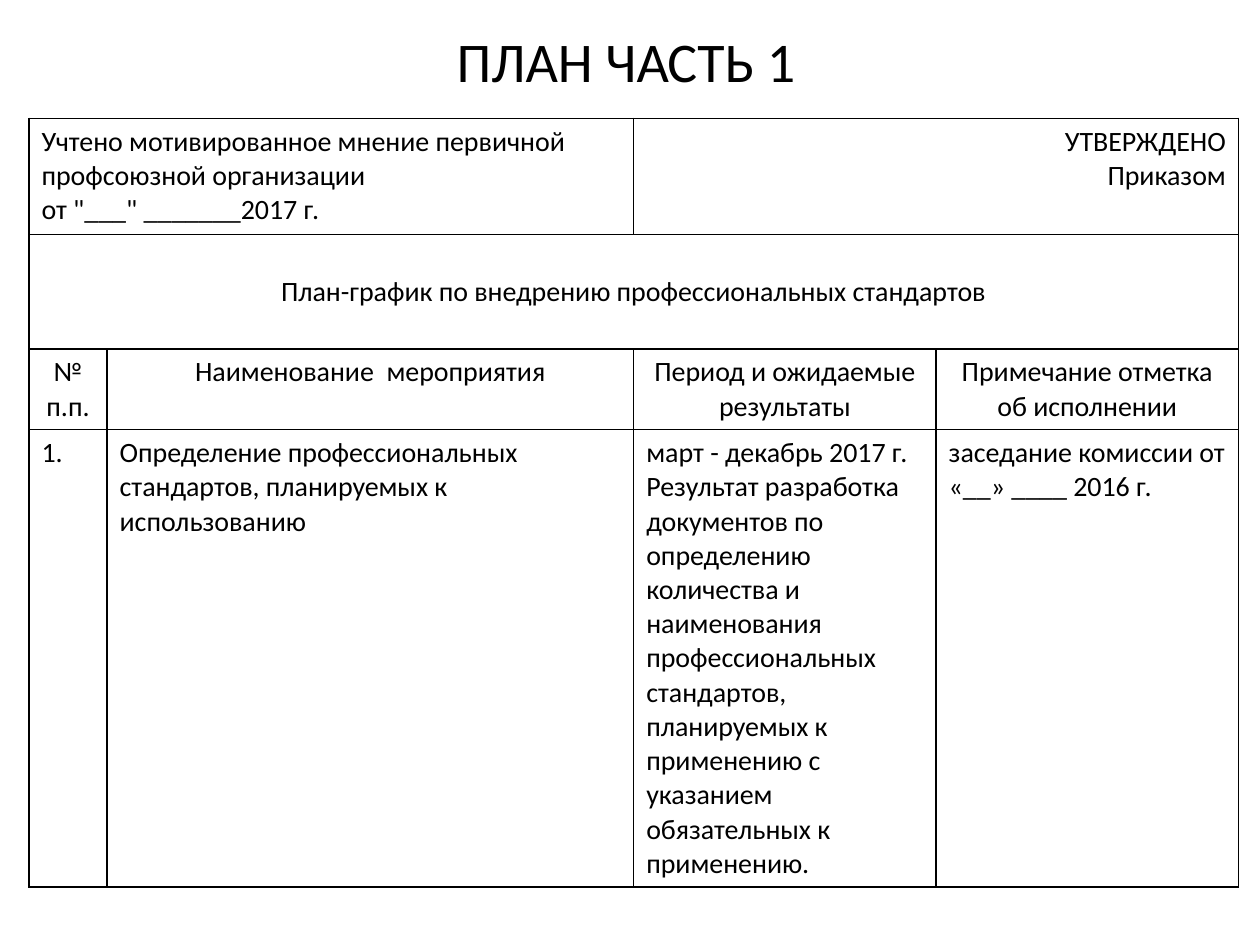
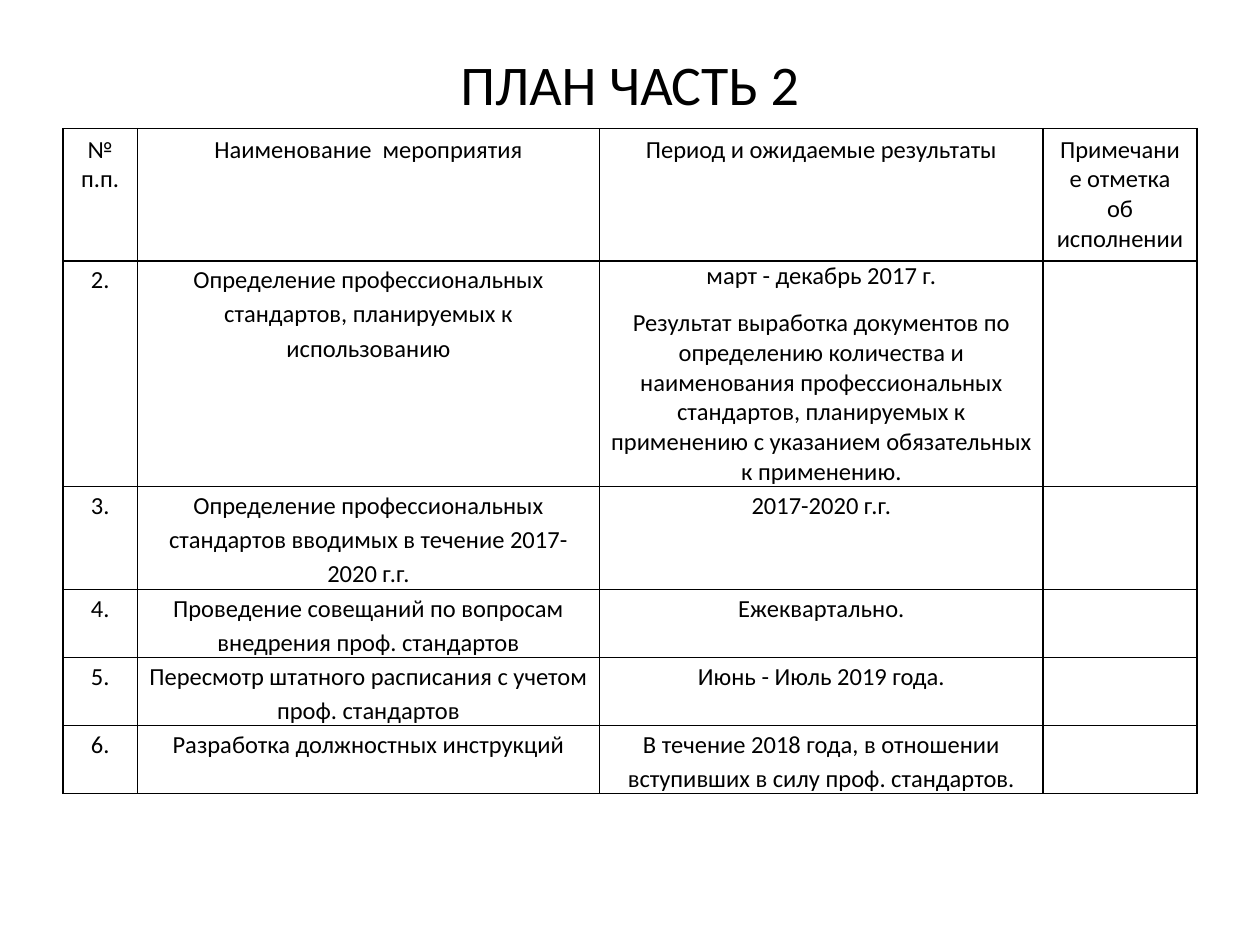
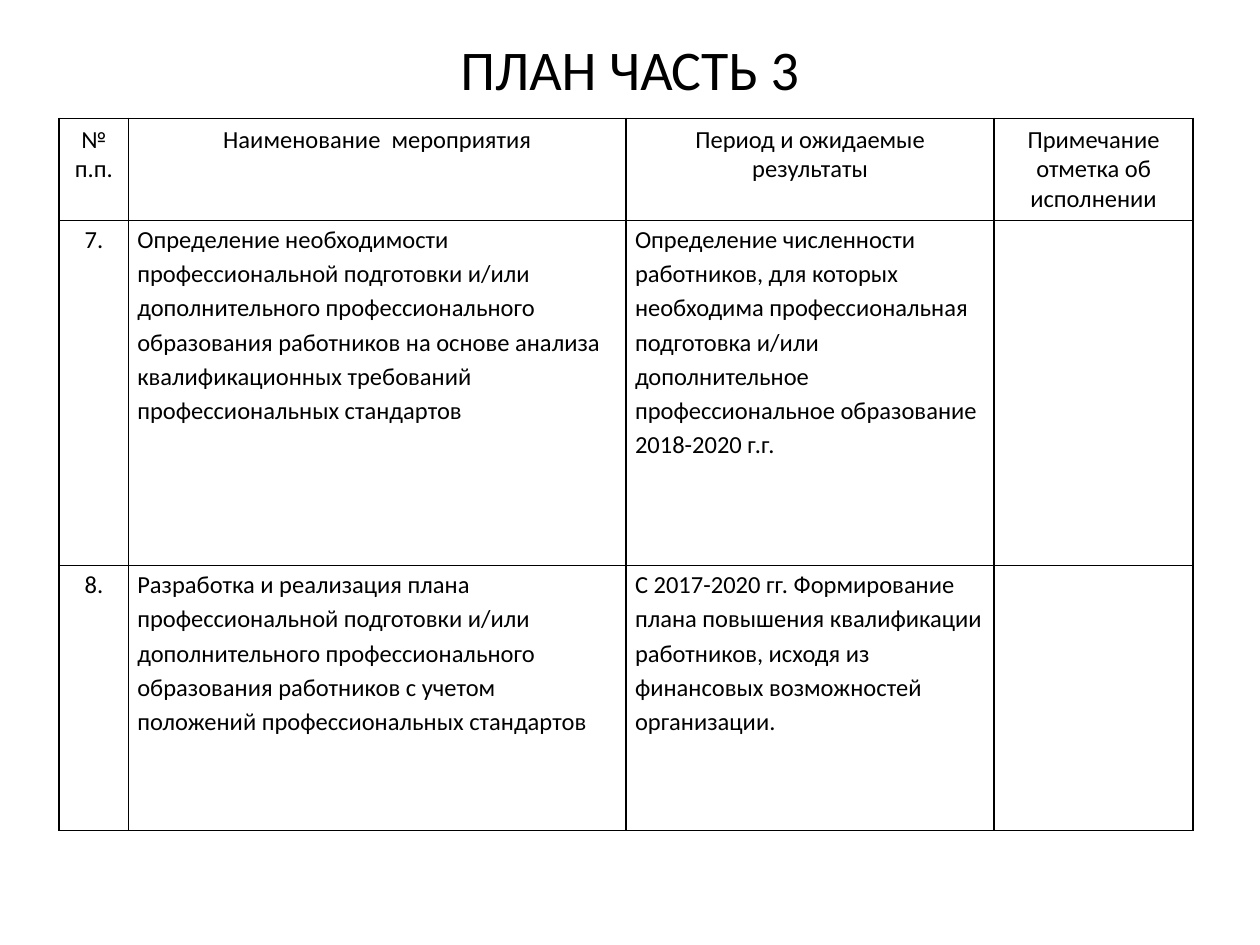
from lxml import etree
from pptx import Presentation
from pptx.dml.color import RGBColor
from pptx.enum.text import MSO_ANCHOR, PP_ALIGN
from pptx.oxml.ns import qn
from pptx.util import Inches, Pt

MIDDLE = MSO_ANCHOR.MIDDLE
ALIGN = {"l": PP_ALIGN.LEFT, "c": PP_ALIGN.CENTER, "r": PP_ALIGN.RIGHT}

# Shared style
FONT = "Calibri"
INK = "000000"
TITLE_SIZE = 32
BORDER_WIDTH = Pt(1)
BLANK_LAYOUT = 6
HEADER = ["№ п.п.", "Наименование  мероприятия",
          "Период и ожидаемые результаты", "Примечание отметка об исполнении"]


def add_text(para, text, size, align):
    para.alignment = ALIGN[align]
    span = para.add_run()
    span.text = text
    span.font.name = FONT
    span.font.size = Pt(size)
    span.font.color.rgb = RGBColor.from_string(INK)


def add_borders(cell):
    properties = cell._tc.get_or_add_tcPr()
    for index, side in enumerate(("lnL", "lnR", "lnT", "lnB")):
        line = etree.Element(qn("a:" + side), w=str(BORDER_WIDTH))
        fill = etree.SubElement(line, qn("a:solidFill"))
        etree.SubElement(fill, qn("a:srgbClr"), val=INK)
        properties.insert(index, line)


# Each row is its column alignments and its cells; "\n" parts paragraphs.
# Rows from "spaced_from" on have narrow margins and wider line spacing.
plans = [
    {
        "title": "ПЛАН ЧАСТЬ 1", "title_box": (0.47, 0.16, 9, 0.64),
        "corner": (0.23, 0.94), "size": 16, "spaced_from": 4,
        "columns": [0.62, 4.18, 2.4, 2.4],
        "heights": [0.92, 0.91, 0.64, 3.63],
        "merges": [(0, 0, 1), (0, 2, 3), (1, 0, 3)],
        "rows": [
            ("llrr", ["Учтено мотивированное мнение первичной профсоюзной организации\n"
                      "от \"___\" _______2017 г.", "", "УТВЕРЖДЕНО\nПриказом", ""]),
            ("cccc", ["План-график по внедрению профессиональных стандартов", "", "", ""]),
            ("cccc", HEADER),
            ("llll", ["1.",
                      "Определение профессиональных стандартов, планируемых к использованию",
                      "март - декабрь 2017 г.\n"
                      "Результат разработка документов по определению количества и "
                      "наименования профессиональных стандартов, планируемых к применению "
                      "с указанием обязательных к применению.",
                      "заседание комиссии от «__» ____ 2016 г."]),
        ],
    },
    {
        "title": "ПЛАН ЧАСТЬ 2", "title_box": (0.5, 0.3, 9, 0.72),
        "corner": (0.5, 1.02), "size": 14, "spaced_from": 1,
        "columns": [0.59, 3.67, 3.52, 1.22],
        "heights": [1.05, 1.79, 0.82, 0.54, 0.54, 0.54],
        "merges": [],
        "rows": [
            ("cccc", HEADER),
            ("cccc", ["2.",
                      "Определение профессиональных стандартов, планируемых к использованию",
                      "март - декабрь 2017 г.\n"
                      "Результат выработка документов по определению количества и "
                      "наименования профессиональных стандартов, планируемых к применению "
                      "с указанием обязательных к применению.", ""]),
            ("cccc", ["3.", "Определение профессиональных стандартов вводимых "
                      "в течение 2017-2020 г.г.", "2017-2020 г.г.", ""]),
            ("cccc", ["4.", "Проведение совещаний по вопросам внедрения проф. стандартов",
                      "Ежеквартально.", ""]),
            ("cccc", ["5.", "Пересмотр штатного расписания с учетом проф. стандартов",
                      "Июнь - Июль 2019 года.", ""]),
            ("cccc", ["6.", "Разработка должностных инструкций",
                      "В течение 2018 года, в отношении вступивших в силу "
                      "проф. стандартов.", ""]),
        ],
    },
    {
        "title": "ПЛАН ЧАСТЬ 3", "title_box": (0.5, 0.3, 9, 0.48),
        "corner": (0.47, 0.94), "size": 14, "spaced_from": 1,
        "columns": [0.55, 3.95, 2.92, 1.58],
        "heights": [0.81, 2.74, 2.1],
        "merges": [],
        "rows": [
            ("cccc", HEADER),
            ("clll", ["7.",
                      "Определение необходимости профессиональной подготовки и/или "
                      "дополнительного профессионального образования работников на основе "
                      "анализа квалификационных требований профессиональных стандартов",
                      "Определение численности работников, для которых необходима "
                      "профессиональная подготовка и/или дополнительное "
                      "профессиональное образование 2018-2020 г.г.", ""]),
            ("clll", ["8.",
                      "Разработка и реализация плана профессиональной подготовки и/или "
                      "дополнительного профессионального образования работников с учетом "
                      "положений профессиональных стандартов",
                      "С 2017-2020 гг. Формирование плана повышения квалификации "
                      "работников, исходя из финансовых возможностей организации.", ""]),
        ],
    },
]

deck = Presentation()
deck.slide_width, deck.slide_height = Inches(10), Inches(7.5)

for plan in plans:
    page = deck.slides.add_slide(deck.slide_layouts[BLANK_LAYOUT])

    # Title
    box = page.shapes.add_textbox(*map(Inches, plan["title_box"]))
    box.text_frame.word_wrap = True
    box.text_frame.vertical_anchor = MIDDLE
    add_text(box.text_frame.paragraphs[0], plan["title"], TITLE_SIZE, "c")

    # Table grid
    columns, heights = plan["columns"], plan["heights"]
    area = (*plan["corner"], sum(columns), sum(heights))
    table = page.shapes.add_table(len(heights), len(columns), *map(Inches, area)).table
    table.first_row = table.horz_banding = False
    for column, width in zip(table.columns, columns):
        column.width = Inches(width)
    for row, height in zip(table.rows, heights):
        row.height = Inches(height)
    for row, first, last in plan["merges"]:
        table.cell(row, first).merge(table.cell(row, last))

    # Cells
    for row, (aligns, texts) in enumerate(plan["rows"]):
        spaced = row >= plan["spaced_from"]
        for column, (align, text) in enumerate(zip(aligns, texts)):
            cell = table.cell(row, column)
            cell.fill.background()
            add_borders(cell)
            if cell.is_merge_origin and column + cell.span_width == len(columns) and align == "c":
                cell.vertical_anchor = MIDDLE
            if not text:
                continue
            if spaced:
                cell.margin_left = cell.margin_right = Inches(0.07)
                cell.margin_top = cell.margin_bottom = 0
            lines = text.split("\n")
            for index, line in enumerate(lines):
                frame = cell.text_frame
                para = frame.add_paragraph() if index else frame.paragraphs[0]
                add_text(para, line, plan["size"], align)
                if spaced:
                    para.space_after = Pt(10)
                    para.line_spacing = 1.15 if len(lines) == 1 else 1.0

deck.save("out.pptx")
